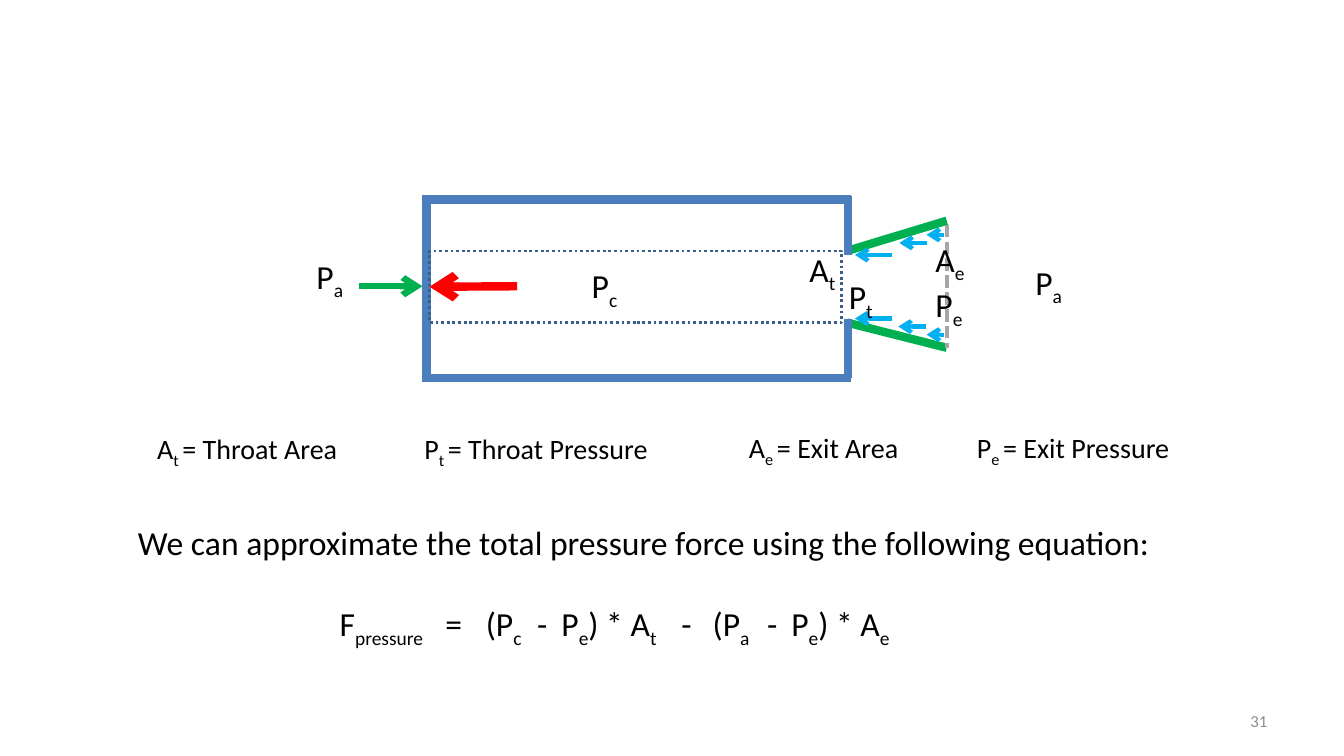
"""Build a slide on the pressure forces in a rocket chamber and nozzle."""
from lxml.etree import SubElement
from pptx import Presentation
from pptx.dml.color import RGBColor
from pptx.enum.dml import MSO_LINE
from pptx.enum.shapes import MSO_CONNECTOR, MSO_SHAPE
from pptx.enum.text import MSO_ANCHOR, MSO_AUTO_SIZE, PP_ALIGN
from pptx.oxml.ns import qn
from pptx.util import Emu, Pt

EMU_PER_PX = 9144
COLORS = {
    "wall": "4B7EBC", "nozzle": "00B050", "exit": "A6A6A6", "push": "00B0F0",
    "chamber": "FF0000", "core": "3A5F8C", "text": "000000", "number": "8C8C8C",
}
WALLS = [
    (419, 198, 844, 198), (419, 375, 844, 375), (423, 201, 423, 375),
    (841, 194, 841, 253), (841, 316, 841, 375),
]
NOZZLE = [(939, 219, 840, 249), (939, 345, 840, 320)]
NOZZLE_ARROWS = [
    (885, 848, 253), (885, 848, 316), (919, 892, 241),
    (918, 891, 324), (936, 919, 233), (936, 919, 332),
]
SYMBOLS = [
    (577, 258, "P_c"), (304, 249, "P_a"), (832, 269, "P_t"), (918, 277, "P_e"),
    (1017, 255, "P_a"), (918, 232, "A_e"), (793, 242, "A_t"),
]
LEGEND = [
    (146, 423, 253, "A_t _= Throat Area"), (733, 422, 222, "A_e _= Exit Area"),
    (959, 422, 290, "P_e _= Exit Pressure"), (411, 423, 290, "P_t _= Throat Pressure"),
]
STATEMENT = "We can approximate the total pressure force using the following equation:"
EQUATION = "\tF_pressure_\t=\t(P_c_\t-\tP_e_) * A_t_\t-\t(P_a_\t-\tP_e_) * A_e"
EQUATION_TABS = [200, 305, 345, 396, 420, 539, 570, 624, 648]


def px(length):
    """Convert pixels to EMU."""
    return Emu(length * EMU_PER_PX)


def rgb(name):
    """Return the named colour."""
    return RGBColor.from_string(COLORS[name])


def add_line(slide, ends, color, width, dash=None, arrow=False):
    """Add a straight connector, with an arrowhead at its end if wanted."""
    connector = slide.shapes.add_connector(MSO_CONNECTOR.STRAIGHT, *map(px, ends))
    connector.line.color.rgb = rgb(color)
    connector.line.width = Pt(width)
    if dash:
        connector.line.dash_style = dash
    properties = connector.element.spPr
    if arrow:
        SubElement(properties.find(qn("a:ln")), qn("a:tailEnd"), type="arrow")
    SubElement(properties, qn("a:effectLst"))
    return connector


def add_core(slide):
    """Add the dotted outline of the throat-sized core."""
    shape = slide.shapes.add_shape(MSO_SHAPE.RECTANGLE, *map(px, (426, 249, 409, 71)))
    shape.shadow.inherit = False
    shape.fill.background()
    shape.line.color.rgb = rgb("core")
    shape.line.width = Pt(2)
    shape.line.dash_style = MSO_LINE.ROUND_DOT
    return shape


def write(paragraph, text, size, color="text"):
    """Write text in which underscores switch subscript on and off."""
    for index, part in enumerate(text.split("_")):
        run = paragraph.add_run()
        run.text = part
        run.font.name = "Calibri"
        run.font.size = Pt(size)
        run.font.color.rgb = rgb(color)
        if index % 2:
            run.font.element.set("baseline", "-25000") if hasattr(
                run.font, "element") else run.font._element.set("baseline", "-25000")


def add_text(slide, box, text, size, color="text"):
    """Add a wrapping text box with one paragraph."""
    frame = slide.shapes.add_textbox(*map(px, box)).text_frame
    frame.word_wrap = True
    frame.auto_size = MSO_AUTO_SIZE.SHAPE_TO_FIT_TEXT
    write(frame.paragraphs[0], text, size, color)
    return frame


def add_equation(frame):
    """Add the pressure force equation, aligned by tab stops."""
    paragraph = frame.add_paragraph()
    paragraph.space_before = Pt(29)
    write(paragraph, EQUATION, 24)
    tabs = SubElement(paragraph._p.get_or_add_pPr(), qn("a:tabLst"))
    for stop in EQUATION_TABS:
        SubElement(tabs, qn("a:tab"), pos=str(px(stop)), algn="l")


def add_engine(slide):
    """Draw the chamber, the nozzle and the pressure arrows."""
    for ends in NOZZLE:
        add_line(slide, ends, "nozzle", 6)
    add_line(slide, (939, 223, 939, 345), "exit", 3, dash=MSO_LINE.SQUARE_DOT)
    for ends in WALLS:
        add_line(slide, ends, "wall", 6)
    for start, end, height in NOZZLE_ARROWS:
        add_line(slide, (start, height, end, height), "push", 3, arrow=True)
    core = add_core(slide)
    force = add_line(slide, (513, 284, 426, 284), "chamber", 6, arrow=True)
    force.end_connect(core, 1)
    add_line(slide, (356, 284, 419, 284), "nozzle", 4.5, arrow=True)


def main():
    """Build and save the slide."""
    presentation = Presentation()
    presentation.slide_width, presentation.slide_height = px(1333), px(750)
    slide = presentation.slides.add_slide(presentation.slide_layouts[6])
    number = add_text(slide, (956, 695, 311, 40), "31", 12, "number")
    number.auto_size = MSO_AUTO_SIZE.NONE
    number.vertical_anchor = MSO_ANCHOR.MIDDLE
    number.paragraphs[0].alignment = PP_ALIGN.RIGHT
    add_engine(slide)
    for left, top, symbol in SYMBOLS:
        add_text(slide, (left, top, 63, 50), symbol, 24)
    for left, top, width, meaning in LEGEND:
        add_text(slide, (left, top, width, 44), meaning, 20)
    add_equation(add_text(slide, (127, 513, 1079, 131), STATEMENT, 24))
    presentation.save("out.pptx")


if __name__ == "__main__":
    main()
